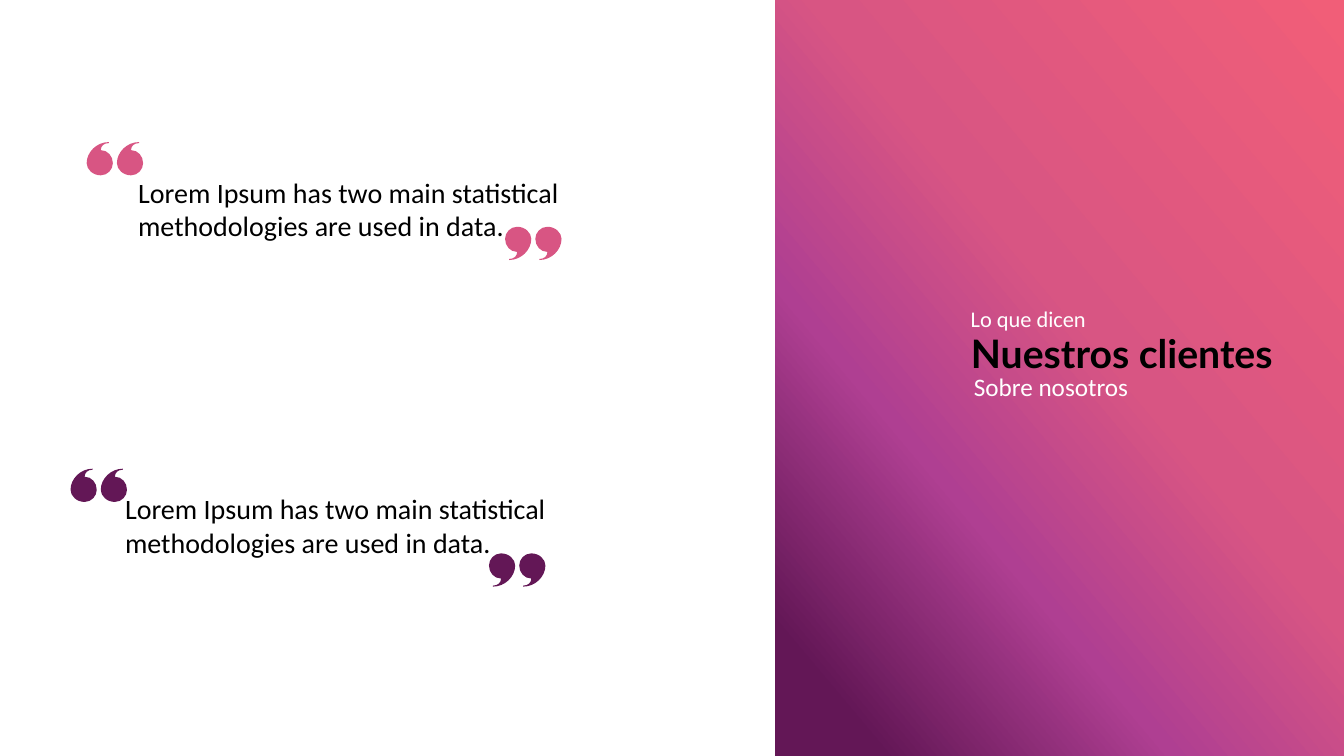
from lxml.etree import SubElement
from pptx import Presentation
from pptx.dml.color import RGBColor
from pptx.enum.shapes import MSO_SHAPE
from pptx.enum.text import MSO_ANCHOR, MSO_AUTO_SIZE, PP_ALIGN
from pptx.oxml.ns import qn
from pptx.util import Inches, Pt

BLACK, WHITE, PINK, PLUM = "000000", "FFFFFF", "D85583", "631756"
PANEL_STOPS = [(0, "F15E78"), (44, PINK), (67, "AF3F92"), (91, PLUM)]
QUOTE = "Lorem Ipsum has two main statistical methodologies are used in data."
MARK_WIDTH, MARK_HEIGHT, MARK_STEP = 0.26, 0.33, 0.3
MARK_START = (0.14, 0.08)
MARK_CURVES = [
    [(0.14, 0.04), (0.17, 0.01), (0.22, 0.01)],
    [(0.22, 0), (0.22, 0), (0.22, 0)],
    [(0.1, 0), (0, 0.1), (0, 0.21)],
    [(0, 0.27), (0.06, 0.33), (0.14, 0.33)],
    [(0.21, 0.33), (0.26, 0.27), (0.26, 0.21)],
    [(0.26, 0.14), (0.21, 0.08), MARK_START],
]


def color(value):
    """Turn a hex string into a colour."""
    return RGBColor.from_string(value)


def place(shape, box):
    """Move a shape to a box given in inches."""
    shape.left, shape.top, shape.width, shape.height = map(Inches, box)


def write_text(shape, text, size, font, fill, bold=False, wrap=True, insets=(0.1, 0.05)):
    """Format a text frame and add one run to it."""
    frame = shape.text_frame
    frame.word_wrap = wrap
    frame.auto_size = MSO_AUTO_SIZE.NONE
    frame.vertical_anchor = MSO_ANCHOR.TOP
    frame.margin_left = frame.margin_right = Inches(insets[0])
    frame.margin_top = frame.margin_bottom = Inches(insets[1])
    paragraph = frame.paragraphs[0]
    paragraph.alignment = PP_ALIGN.LEFT
    run = paragraph.add_run()
    run.text = text
    run.font.size = Pt(size)
    run.font.name = font
    run.font.bold = bold
    run.font.color.rgb = color(fill)


def add_text(slide, box, text, size, **options):
    """Add a Calibri text box."""
    shape = slide.shapes.add_textbox(*map(Inches, box))
    write_text(shape, text, size, "Calibri", **options)


def bend_lines(shape):
    """Merge each three line segments of a freeform into one cubic curve."""
    outline = next(shape.element.iter(qn("a:path")))
    lines = outline.findall(qn("a:lnTo"))
    for index in range(0, len(lines), 3):
        curve = SubElement(outline, qn("a:cubicBezTo"))
        lines[index].addprevious(curve)
        for line in lines[index:index + 3]:
            curve.append(line[0])
            outline.remove(line)


def add_mark(slide, left, top, fill, closing):
    """Draw one quotation mark, turned half around when closing."""
    points = [MARK_START] + [point for curve in MARK_CURVES for point in curve]
    if closing:
        points = [(MARK_WIDTH - x, MARK_HEIGHT - y) for x, y in points]
    outline = [(Inches(left + x), Inches(top + y)) for x, y in points]
    builder = slide.shapes.build_freeform(*outline[0])
    builder.add_line_segments(outline[1:], close=True)
    mark = builder.convert_to_shape()
    bend_lines(mark)
    mark.shadow.inherit = False
    mark.fill.solid()
    mark.fill.fore_color.rgb = color(fill)
    mark.line.fill.background()


def add_testimonial(slide, box, fill, text_offset):
    """Place a quotation between its opening and closing marks."""
    left, top, width, height = box
    for index in range(2):
        shift = index * MARK_STEP
        add_mark(slide, left + shift, top, fill, False)
        add_mark(slide, left + width - MARK_WIDTH - shift, top + height - MARK_HEIGHT, fill, True)
    text_box = (left + text_offset[0], top + text_offset[1], 4.46, 0.79)
    add_text(slide, text_box, QUOTE, 20, fill=BLACK, insets=(0.12, 0.06))


def add_panel(slide, box):
    """Draw the gradient panel."""
    panel = slide.shapes.add_shape(MSO_SHAPE.RECTANGLE, *map(Inches, box))
    panel.shadow.inherit = False
    panel.line.fill.background()
    panel.fill.gradient()
    panel.fill.gradient_angle = 220
    stops = next(panel.element.iter(qn("a:gsLst")))
    for stop in list(stops):
        stops.remove(stop)
    for position, value in PANEL_STOPS:
        stop = SubElement(stops, qn("a:gs"), pos=str(position * 1000))
        SubElement(stop, qn("a:srgbClr"), val=value)


def add_heading(slide, box):
    """Place the title with a line above and a line below it."""
    left, top, width, height = box
    title = slide.shapes.title
    place(title, (left, top + 0.24, width, 0.57))
    write_text(title, "Nuestros clientes", 28, "Lato", BLACK, bold=True)
    slide.shapes.element.append(title.element)
    add_text(slide, (left, top, 1.36, 0.37), "Lo que dicen", 16, fill=WHITE, wrap=False)
    add_text(slide, (left + 0.03, top + height - 0.4, 1.75, 0.4), "Sobre nosotros", 18,
             fill=WHITE, wrap=False)


def main():
    """Build and save the slide."""
    presentation = Presentation()
    presentation.slide_width = Inches(13.33)
    presentation.slide_height = Inches(7.5)
    slide = presentation.slides.add_slide(presentation.slide_layouts[5])
    add_panel(slide, (7.69, 0, 5.64, 7.5))
    add_testimonial(slide, (0.86, 1.41, 4.71, 1.17), PINK, (0.39, 0.27))
    add_testimonial(slide, (0.7, 4.65, 4.71, 1.17), PLUM, (0.42, 0.17))
    add_heading(slide, (9.53, 2.98, 3.96, 1.05))
    presentation.save("out.pptx")


if __name__ == "__main__":
    main()
